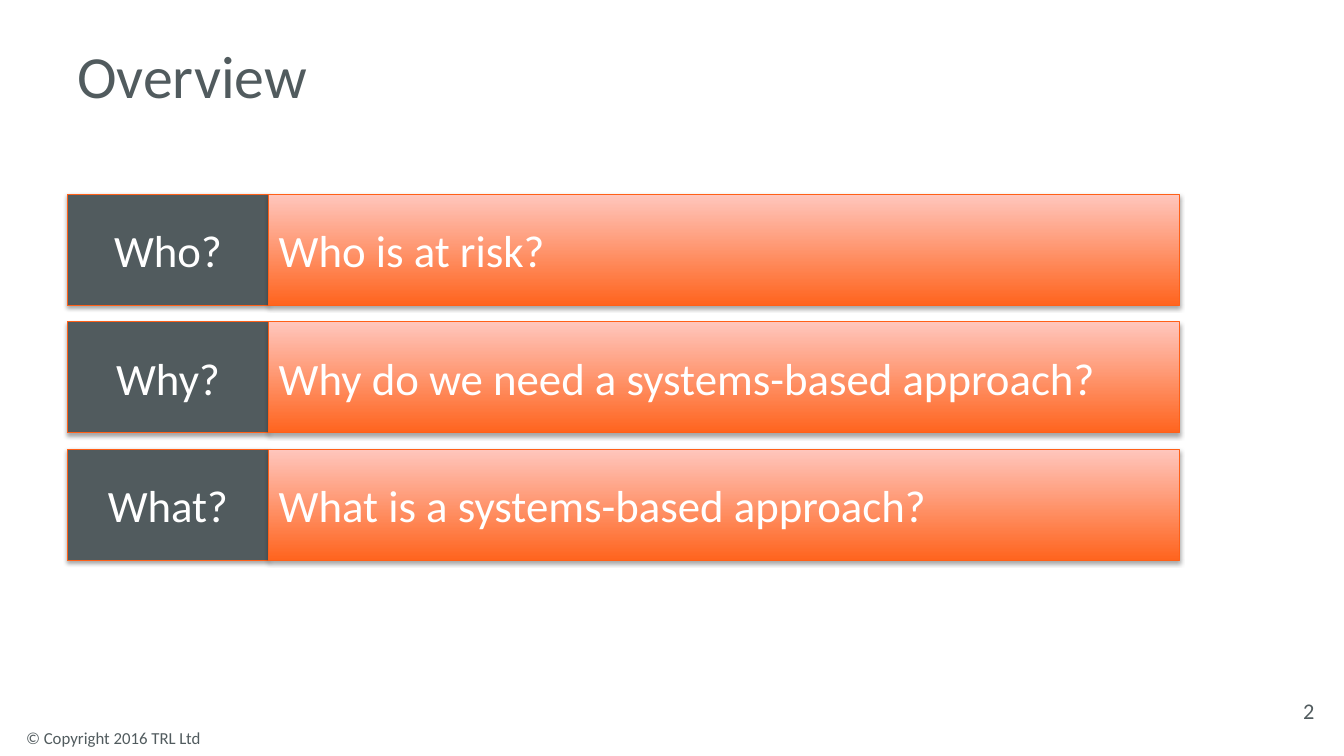
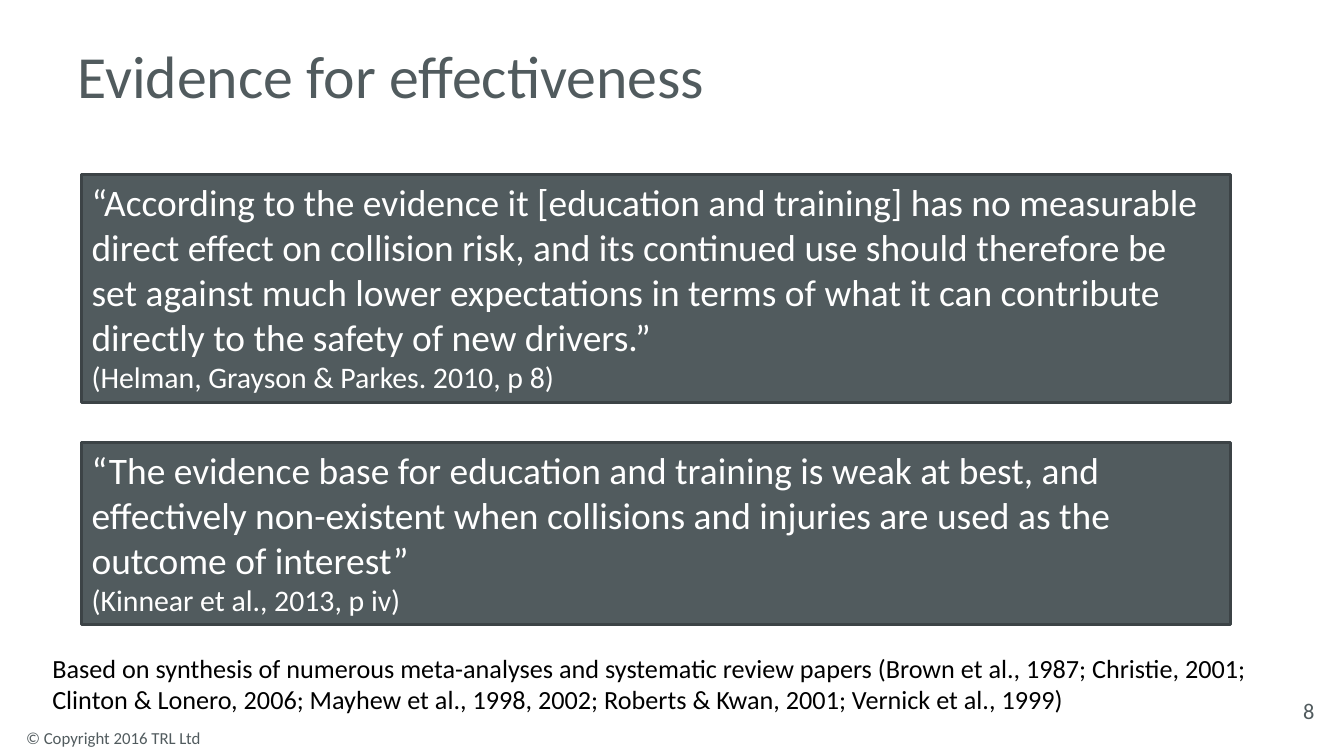
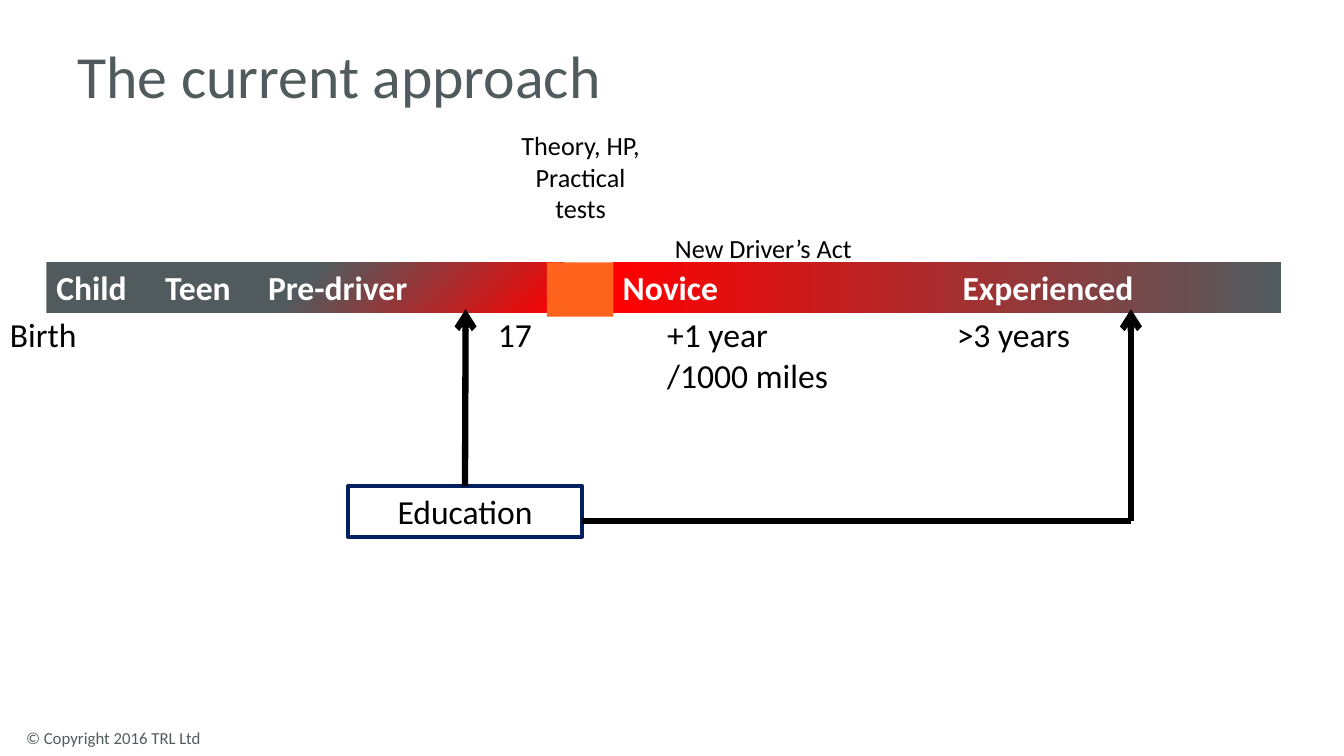
from lxml import etree
from pptx import Presentation
from pptx.dml.color import RGBColor
from pptx.enum.shapes import MSO_CONNECTOR, MSO_SHAPE
from pptx.enum.text import MSO_ANCHOR, MSO_AUTO_SIZE, PP_ALIGN
from pptx.oxml.ns import qn
from pptx.util import Inches, Pt

RECTANGLE = MSO_SHAPE.RECTANGLE
STRAIGHT = MSO_CONNECTOR.STRAIGHT
LEFT, CENTER = PP_ALIGN.LEFT, PP_ALIGN.CENTER
TOP, MIDDLE = MSO_ANCHOR.TOP, MSO_ANCHOR.MIDDLE
NO_AUTOFIT = MSO_AUTO_SIZE.NONE

# Shared style
FONT = "Calibri"
SLATE, SLATE_EDGE, NAVY = "515B5E", "3C4346", "002060"
ORANGE, ORANGE_EDGE, PEACH = "FF641E", "FF6018", "FFC6BD"
RED, WHITE, BLACK = "FF0000", "FFFFFF", "000000"
rgb = RGBColor.from_string

deck = Presentation()
deck.slide_width, deck.slide_height = Inches(13.33), Inches(7.5)
ACROSS, DOWN = deck.slide_width / 100, deck.slide_height / 100


def write(frame, text, size=24, color=BLACK, bold=False, align=LEFT,
          anchor=TOP, tabs=(), source_size=None):
    """Write one paragraph per line; lines after the first may have their own size."""
    frame.word_wrap = True
    frame.auto_size = NO_AUTOFIT
    frame.vertical_anchor = anchor
    for index, line in enumerate(text.split("\n")):
        para = frame.add_paragraph() if index else frame.paragraphs[0]
        para.alignment = align
        if tabs:
            stops = etree.SubElement(para._p.get_or_add_pPr(), qn("a:tabLst"))
            for stop in tabs:
                etree.SubElement(stops, qn("a:tab"), pos=str(Inches(stop)), algn="l")
        span = para.add_run()
        span.text = line
        span.font.name = FONT
        span.font.size = Pt(source_size if index and source_size else size)
        span.font.bold = bold
        span.font.color.rgb = rgb(color)


def add_box(page, area, text="", fill=None, gradient=None, line=None,
            shadow=False, **style):
    """Add a box; area is left, top, width, height in percent of the slide."""
    left, top, width, height = area
    frame_area = (int(left * ACROSS), int(top * DOWN),
                  int(width * ACROSS), int(height * DOWN))
    if not (fill or gradient or line):
        box = page.shapes.add_textbox(*frame_area)
    else:
        box = page.shapes.add_shape(RECTANGLE, *frame_area)
        box.shadow.inherit = False
        if gradient:
            angle, *stops = gradient
            box.fill.gradient()
            box.fill.gradient_angle = angle
            for stop, (position, color) in zip(box.fill.gradient_stops, stops):
                stop.position, stop.color.rgb = position, rgb(color)
        elif fill:
            box.fill.solid()
            box.fill.fore_color.rgb = rgb(fill)
        else:
            box.fill.background()
        if line:
            box.line.color.rgb, box.line.width = rgb(line[0]), Pt(line[1])
        else:
            box.line.fill.background()
        if shadow:
            effects = box._element.spPr.find(qn("a:effectLst"))
            outer = etree.SubElement(effects, qn("a:outerShdw"), blurRad=str(Pt(3.1)),
                                     dist=str(Pt(1.8)), dir="5400000", rotWithShape="0")
            tint = etree.SubElement(outer, qn("a:srgbClr"), val=BLACK)
            etree.SubElement(tint, qn("a:alpha"), val="35000")
    if text:
        write(box.text_frame, text, **style)
    return box


# Pages with title, copyright line and number
pages = []
for heading, number in (("Overview", "2"), ("Evidence for effectiveness", "8"),
                        ("The current approach", None)):
    page = deck.slides.add_slide(deck.slide_layouts[5])
    title = page.shapes.title
    title.left, title.top = int(5 * ACROSS), int(3.9 * DOWN)
    title.width, title.height = int(77 * ACROSS), int(12 * DOWN)
    write(title.text_frame, heading, size=42.7, color=SLATE, anchor=MIDDLE)
    add_box(page, (1.2, 95.6, 16.35, 4), "© Copyright 2016 TRL Ltd", size=12, color=SLATE)
    if number:
        add_box(page, (95.05, 91.3, 4.65, 5.3), number, size=16, color=SLATE,
                align=CENTER, anchor=MIDDLE)
    pages.append(page)
overview, evidence, approach = pages

# Overview: rows of keyword and question
questions = (("Who?", "Who is at risk?"),
             ("Why?", "Why do we need a systems-based approach?"),
             ("What?", "What is a systems-based approach?"))
row_style = {"line": (ORANGE_EDGE, 0.75), "shadow": True, "size": 32,
             "color": WHITE, "anchor": MIDDLE}
for row, (keyword, question) in enumerate(questions):
    top = 25.7 + row * 16.87
    add_box(overview, (5, top, 15, 14.7), keyword, fill=SLATE, align=CENTER, **row_style)
    add_box(overview, (20, top, 67.75, 14.7), question,
            gradient=(90, (0, ORANGE), (1, PEACH)), **row_style)

# Evidence: quotations with their sources
quotes = (
    (23.1, 30.1, "“According to the evidence it [education and training] has no measurable "
     "direct effect on collision risk, and its continued use should therefore be set "
     "against much lower expectations in terms of what it can contribute directly to "
     "the safety of new drivers.”\n(Helman, Grayson & Parkes. 2010, p 8)"),
    (58.5, 24.1, "“The evidence base for education and training is weak at best, and "
     "effectively non-existent when collisions and injuries are used as the outcome "
     "of interest”\n(Kinnear et al., 2013, p iv)"))
for top, height, quote in quotes:
    add_box(evidence, (6.08, top, 85.45, height), quote, fill=SLATE,
            line=(SLATE_EDGE, 2), size=26.7, source_size=21.3, color=WHITE)
add_box(evidence, (3.15, 85.6, 94.15, 9.7),
        "Based on synthesis of numerous meta-analyses and systematic review papers "
        "(Brown et al., 1987; Christie, 2001; Clinton & Lonero, 2006; Mayhew et al., "
        "1998, 2002; Roberts & Kwan, 2001; Vernick et al., 1999)", size=18.7)

# Approach: timeline bars and the test block between them
BAR_TOP, BAR_HEIGHT, LABEL_TOP = 34.7, 6.7, 40.9
add_box(approach, (3.45, BAR_TOP, 38.5, BAR_HEIGHT), "Child\tTeen\tPre-driver",
        gradient=(315, (0.49, SLATE), (1, RED)), color=WHITE, bold=True, tabs=(1.08, 2.1))
add_box(approach, (45.6, BAR_TOP, 49.7, BAR_HEIGHT), "Novice\tExperienced",
        gradient=(180, (0, SLATE), (1, RED)), color=WHITE, bold=True, tabs=(3.37,))
add_box(approach, (40.7, BAR_TOP, 4.95, 7.2), fill=ORANGE)

# Approach: ages below the bars, measures above them
for left, width, height, age in ((0, 9.15, 6.7, "Birth"), (36.3, 5.55, 6.7, "17"),
                                 (48.9, 13.7, 12.1, "+1 year /1000 miles"),
                                 (70.45, 13.7, 6.7, ">3 years")):
    add_box(approach, (left, LABEL_TOP, width, height), age)
for area, measure in (((38.05, 16.5, 10.3, 13.9), "Theory, HP, Practical tests"),
                      ((46.65, 30.1, 20.3, 5.6), "New Driver’s Act")):
    add_box(approach, area, measure, size=18.7, align=CENTER)

# Approach: education box and its arrows to the timeline
education = add_box(approach, (25.9, 64.3, 17.4, 6.7), "Education",
                    line=(NAVY, 3), align=CENTER)
for start, end, arrow, joined in (((34.6, 64.3), (34.65, LABEL_TOP), True, True),
                                  ((43.3, 68.9), (84.15, 68.9), False, False),
                                  ((84.15, 68.9), (84.15, LABEL_TOP), True, False)):
    link = approach.shapes.add_connector(
        STRAIGHT, int(start[0] * ACROSS), int(start[1] * DOWN),
        int(end[0] * ACROSS), int(end[1] * DOWN))
    if joined:
        link.begin_connect(education, 0)
    link.line.color.rgb, link.line.width = rgb(BLACK), Pt(4.5)
    if arrow:
        etree.SubElement(link.line._get_or_add_ln(), qn("a:tailEnd"), type="arrow")
    etree.SubElement(link._element.spPr, qn("a:effectLst"))

deck.save("out.pptx")
